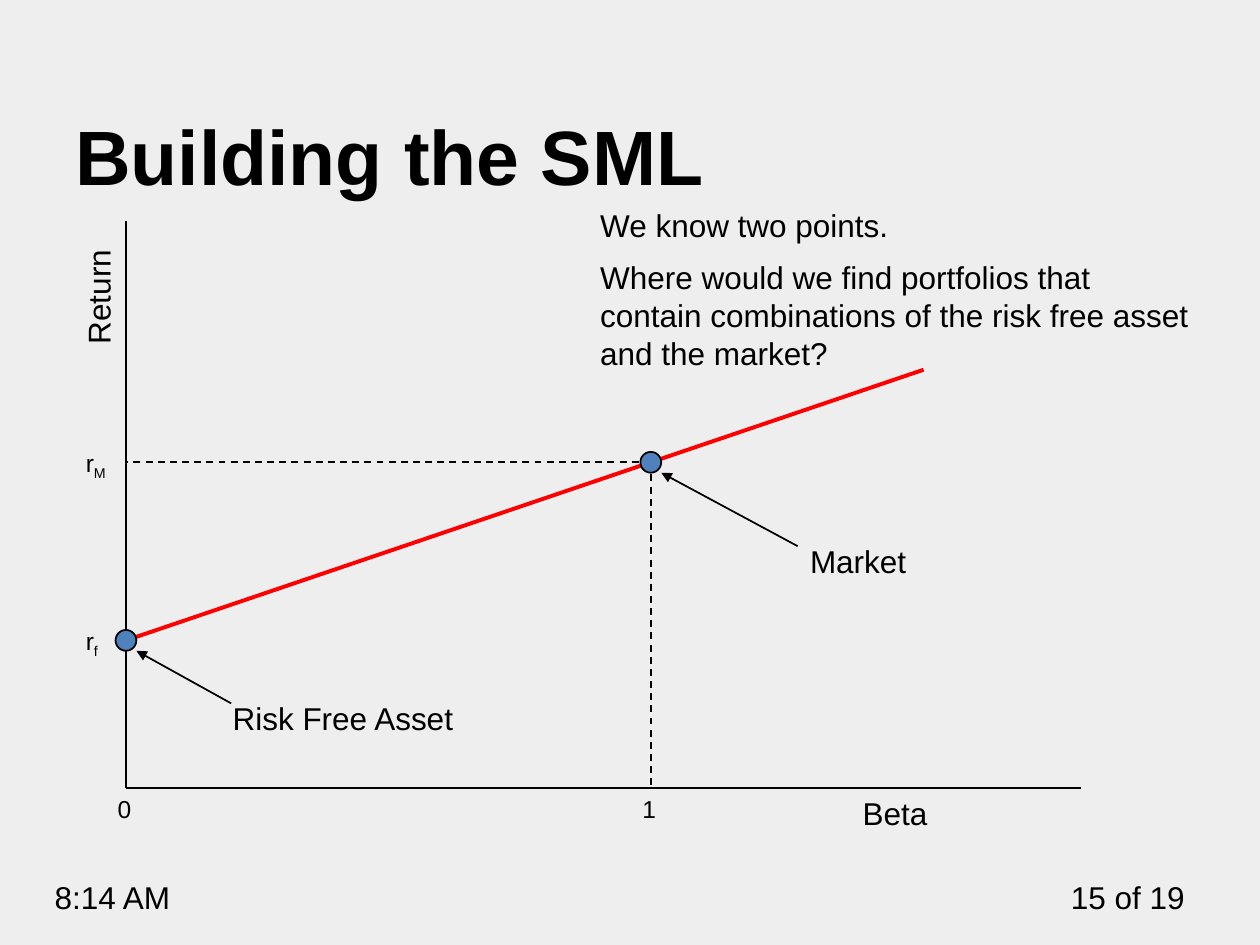
from dataclasses import dataclass

from lxml import etree
from pptx import Presentation
from pptx import util as u
from pptx.dml.color import RGBColor
from pptx.enum import dml, shapes, text
from pptx.oxml import ns


@dataclass(frozen=True)
class Theme:
    font: str = "Arial"
    paper: str = "EEEEEE"
    ink: str = "000000"
    sml: str = "FF0000"
    dot: str = "4F81BD"
    title: float = 44
    body: float = 18
    tick: float = 14
    thin: float = 1
    thick: float = 2.25


@dataclass(frozen=True)
class Box:
    left: float
    top: float
    width: float
    height: float

    @property
    def right(self):
        return self.left + self.width

    @property
    def bottom(self):
        return self.top + self.height


THEME = Theme()
LABEL_HEIGHT = 1.02
TICK_HEIGHT = 0.85


def add_text(slide, words, box, size=THEME.body, bold=False, subscript="",
             align=text.PP_ALIGN.LEFT, anchor=text.MSO_ANCHOR.TOP, rotation=0):
    label = slide.shapes.add_textbox(
        *(u.Cm(n) for n in (box.left, box.top, box.width, box.height)))
    label.rotation = rotation
    frame = label.text_frame
    frame.word_wrap = True
    frame.vertical_anchor = anchor
    paragraph = frame.paragraphs[0]
    paragraph.alignment = align
    for part in filter(None, (words, subscript)):
        run = paragraph.add_run()
        run.text = part
        run.font.name = THEME.font
        run.font.size = u.Pt(size)
        run.font.bold = bold
        run.font.color.rgb = RGBColor.from_string(THEME.ink)
    if subscript:
        run.font._element.set("baseline", "-25000")


def add_line(slide, start, end, color=THEME.ink, weight=THEME.thin,
             dashed=False, arrow=False):
    line = slide.shapes.add_connector(
        shapes.MSO_CONNECTOR.STRAIGHT, *(u.Cm(n) for n in (*start, *end)))
    line.line.color.rgb = RGBColor.from_string(color)
    line.line.width = u.Pt(weight)
    if dashed:
        line.line.dash_style = dml.MSO_LINE.DASH
    if arrow:
        etree.SubElement(line.line._get_or_add_ln(), ns.qn("a:tailEnd"), type="triangle")
    etree.SubElement(line._element.spPr, ns.qn("a:effectLst"))


def add_dot(slide, center, diameter=0.42):
    x, y = center
    dot = slide.shapes.add_shape(
        shapes.MSO_SHAPE.OVAL, u.Cm(x - diameter / 2), u.Cm(y - diameter / 2),
        u.Cm(diameter), u.Cm(diameter))
    dot.shadow.inherit = False
    dot.fill.solid()
    dot.fill.fore_color.rgb = RGBColor.from_string(THEME.dot)
    dot.line.color.rgb = RGBColor.from_string(THEME.ink)
    dot.line.width = u.Pt(THEME.thin)


def add_callout(slide, words, point, offset, width, tail, tip):
    x, y = point
    add_text(slide, words, Box(x + offset[0], y + offset[1], width, LABEL_HEIGHT))
    add_line(slide, (x + tail[0], y + tail[1]), (x + tip[0], y + tip[1]), arrow=True)


def add_sml_plot(slide, box):
    origin = (box.left, box.bottom)
    risk_free = (box.left, box.bottom - 2.97)
    market = (box.left + 10.58, box.bottom - 6.56)
    slope = (market[1] - risk_free[1]) / (market[0] - risk_free[0])
    reach = 16.08
    add_line(slide, risk_free, (box.left + reach, risk_free[1] + slope * reach),
             color=THEME.sml, weight=THEME.thick)
    add_line(slide, (box.left, box.top), origin)
    add_line(slide, origin, (box.right, box.bottom))
    add_line(slide, market, (box.left, market[1]), dashed=True)
    add_line(slide, market, (market[0], box.bottom), dashed=True)

    add_text(slide, "Beta", Box(box.left + 14.6, box.bottom, 3.18, LABEL_HEIGHT))
    add_text(slide, "Return", Box(box.left - 1.83, box.top + 0.96, 2.54, LABEL_HEIGHT),
             rotation=270)
    for subscript, point in (("M", market), ("f", risk_free)):
        add_text(slide, "r", Box(box.left - 1.06, point[1] - 0.42, 1.06, TICK_HEIGHT),
                 size=THEME.tick, subscript=subscript)
    for beta, point in (("0", risk_free), ("1", market)):
        add_text(slide, beta, Box(point[0] - 0.42, box.bottom, 1.06, TICK_HEIGHT),
                 size=THEME.tick)

    add_callout(slide, "Risk Free Asset", risk_free, offset=(1.9, 1.06), width=6.56,
                tail=(2.12, 1.27), tip=(0.21, 0.21))
    add_callout(slide, "Market", market, offset=(2.96, 1.48), width=3.18,
                tail=(2.96, 1.69), tip=(0.21, 0.21))
    for point in (risk_free, market):
        add_dot(slide, point)


def add_heading(slide, box):
    add_text(slide, "Building the SML", box, size=THEME.title, bold=True,
             anchor=text.MSO_ANCHOR.BOTTOM)


def add_question(slide, box):
    add_text(slide, "We know two points.", Box(box.left, box.top, 6.56, LABEL_HEIGHT))
    add_text(slide, "Where would we find portfolios that contain combinations of "
             "the risk free asset and the market?",
             Box(box.left, box.top + 1.06, box.width, box.height - 1.06))


def add_footer(slide, box):
    add_text(slide, "8:14 AM", Box(box.left, box.top, 4.02, box.height))
    add_text(slide, "15 of 19", Box(box.right - 2.97, box.top, 2.97, box.height),
             align=text.PP_ALIGN.RIGHT)


def main():
    deck = Presentation()
    deck.slide_width, deck.slide_height = u.Cm(25.4), u.Cm(19.05)
    slide = deck.slides.add_slide(deck.slide_layouts[6])
    slide.background.fill.solid()
    slide.background.fill.fore_color.rgb = RGBColor.from_string(THEME.paper)
    add_footer(slide, Box(0.85, 17.57, 23.28, LABEL_HEIGHT))
    add_heading(slide, Box(1.27, 0.99, 22.86, 3.18))
    add_sml_plot(slide, Box(2.54, 4.45, 19.26, 11.43))
    add_question(slide, Box(11.85, 4.02, 12.5, 3.62))
    deck.save("out.pptx")


if __name__ == "__main__":
    main()
